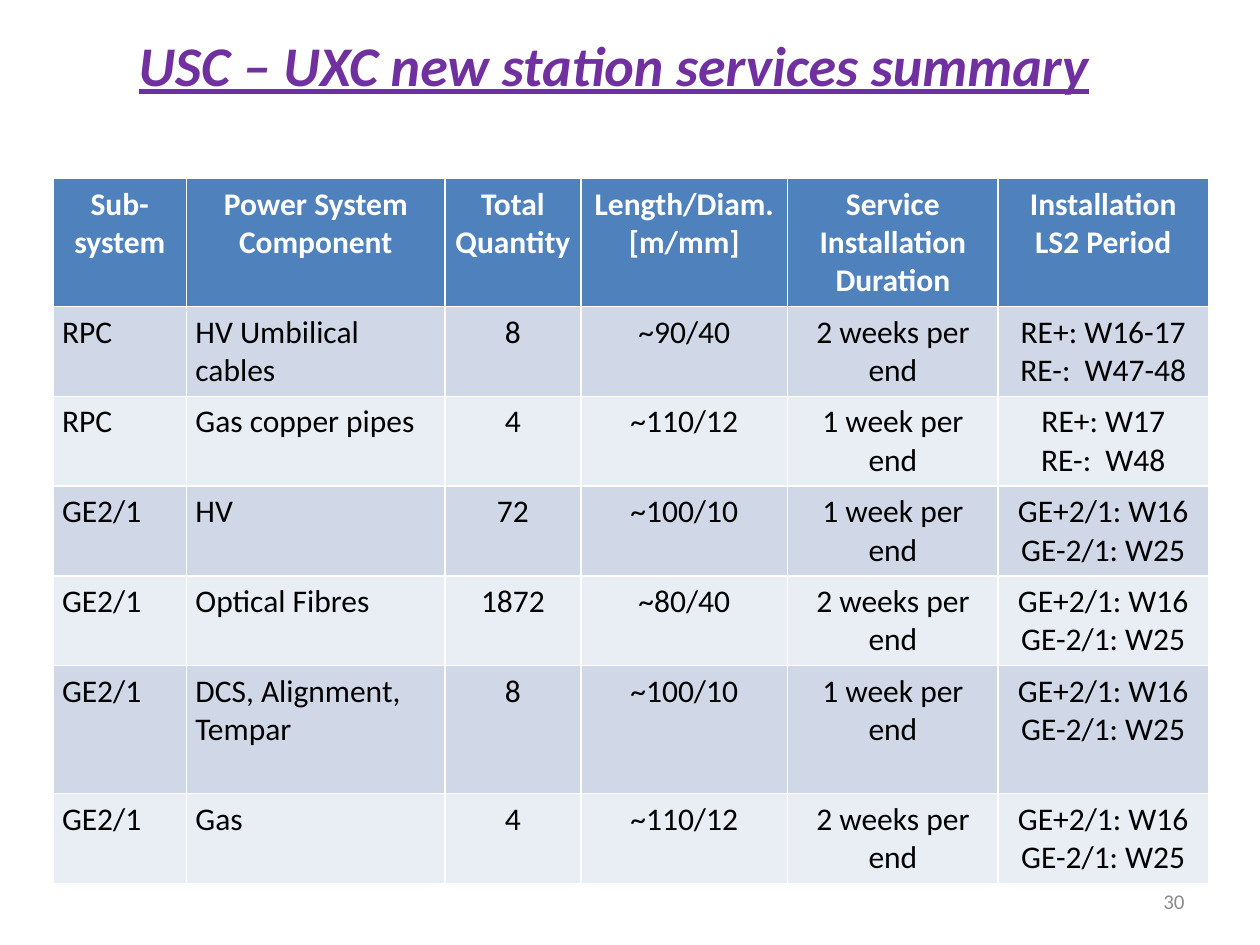
"""Build the USC – UXC new station services summary slide."""
import pptx
import pptx.dml.color
import pptx.enum.text
import pptx.util

Cm = pptx.util.Cm
Pt = pptx.util.Pt
ALIGN = pptx.enum.text.PP_ALIGN
ANCHOR = pptx.enum.text.MSO_ANCHOR

COLORS = {
    "title": "7030A0",
    "header": "4F81BD",
    "odd": "D0D8E8",
    "even": "E9EDF4",
    "white": "FFFFFF",
    "black": "000000",
    "number": "8C8C8C",
}


def rgb(name):
    return pptx.dml.color.RGBColor.from_string(COLORS[name])


def format_text(tf, size, color, align, bold=False, italic=False, underline=False):
    for p in tf.paragraphs:
        p.alignment = align
        for r in p.runs:
            r.font.name = "Calibri"
            r.font.size = Pt(size)
            r.font.bold = bold
            r.font.italic = italic
            r.font.underline = underline
            r.font.color.rgb = rgb(color)


prs = pptx.Presentation()
prs.slide_width = Cm(25.4)
prs.slide_height = Cm(19.05)
s = prs.slides.add_slide(prs.slide_layouts[5])

GE_PERIOD = "GE+2/1: W16\nGE-2/1: W25"
ROWS = [
    ["Sub-system", "Power System Component", "Total\vQuantity", "Length/Diam.\v[m/mm]",
     "Service Installation\vDuration", "Installation\vLS2 Period"],
    ["RPC", "HV Umbilical cables", "8", "~90/40", "2 weeks per end", "RE+: W16-17\vRE-:  W47-48"],
    ["RPC", "Gas copper pipes", "4", "~110/12", "1 week per end", "RE+: W17\vRE-:  W48"],
    ["GE2/1", "HV", "72", "~100/10", "1 week per end", GE_PERIOD],
    ["GE2/1", "Optical Fibres", "1872", "~80/40", "2 weeks per end", GE_PERIOD],
    ["GE2/1", "DCS, Alignment, Tempar", "8", "~100/10", "1 week per end", GE_PERIOD],
    ["GE2/1", "Gas", "4", "~110/12", "2 weeks per end", GE_PERIOD],
]
COL_WIDTHS = [2.69, 5.21, 2.74, 4.17, 4.24, 4.24]
ROW_HEIGHTS = [2.58, 1.81, 1.81, 1.81, 1.81, 2.58, 1.81]

table = s.shapes.add_table(len(ROWS), len(COL_WIDTHS), Cm(1.07), Cm(3.6),
                           Cm(sum(COL_WIDTHS)), Cm(sum(ROW_HEIGHTS))).table
for col, width in zip(table.columns, COL_WIDTHS):
    col.width = Cm(width)
for i, (row, height) in enumerate(zip(ROWS, ROW_HEIGHTS)):
    table.rows[i].height = Cm(height)
    header = i == 0
    fill = "header" if header else ("odd" if i % 2 else "even")
    for j, text in enumerate(row):
        cell = table.cell(i, j)
        cell.margin_left = cell.margin_right = Cm(0.18)
        cell.margin_top = cell.margin_bottom = Cm(0.13)
        cell.fill.solid()
        cell.fill.fore_color.rgb = rgb(fill)
        cell.text_frame.text = text
        align = ALIGN.CENTER if header or j > 1 else ALIGN.LEFT
        format_text(cell.text_frame, 18, "white" if header else "black", align, bold=header)

title = s.shapes.title
title.left, title.top, title.width, title.height = Cm(2.54), Cm(0.48), Cm(20.52), Cm(1.63)
tf = title.text_frame
tf.text = "USC – UXC new station services summary"
tf.vertical_anchor = ANCHOR.TOP
tf.auto_size = pptx.enum.text.MSO_AUTO_SIZE.SHAPE_TO_FIT_TEXT
format_text(tf, 32, "title", ALIGN.LEFT, bold=True, italic=True, underline=True)

sp = s.shapes.add_textbox(Cm(18.21), Cm(17.65), Cm(5.92), Cm(1.02))
tf = sp.text_frame
tf.word_wrap = True
tf.text = "30"
tf.vertical_anchor = ANCHOR.MIDDLE
format_text(tf, 12, "number", ALIGN.RIGHT)

prs.save("out.pptx")
